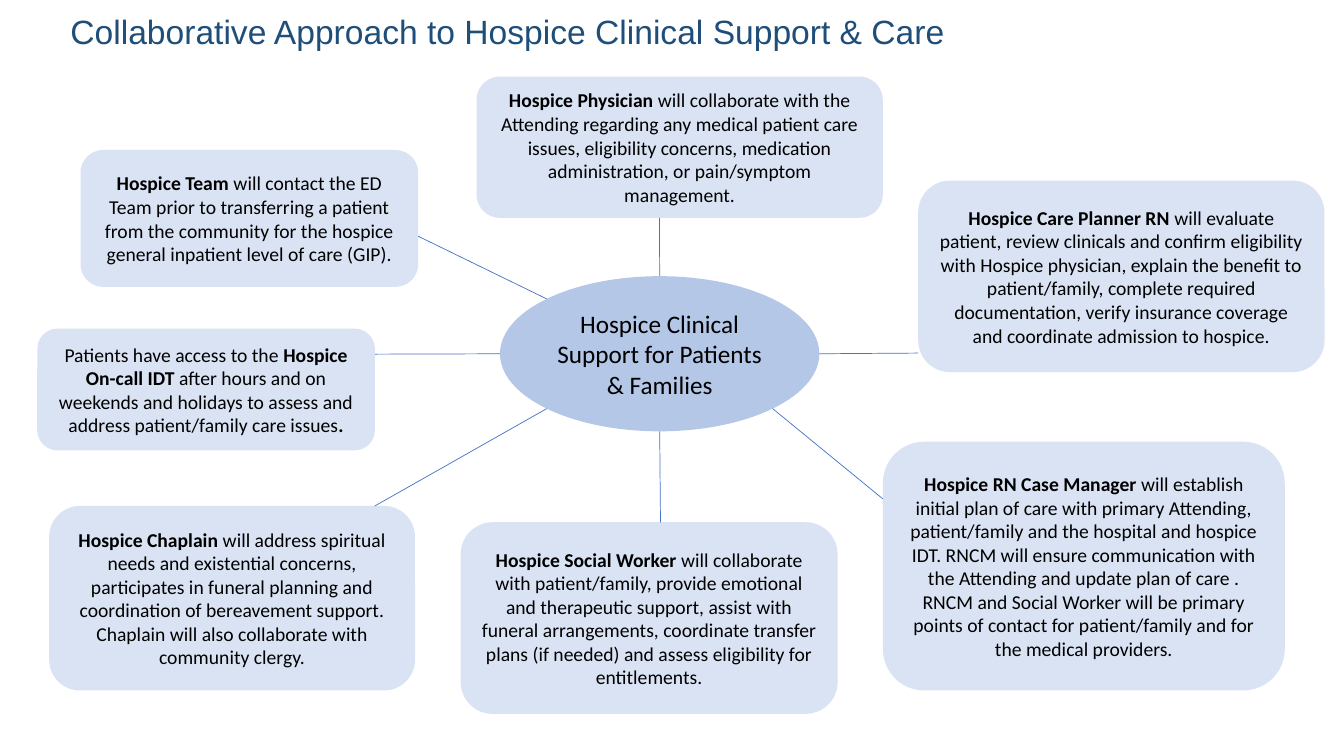
from math import cos, radians, sin

from lxml import etree
from pptx import Presentation
from pptx import util as u
from pptx.dml.color import RGBColor
from pptx.enum import shapes, text
from pptx.oxml.ns import qn

HUB_BOX = (12.6, 6.96, 8.05, 3.91)

# Each role: text (bold between **), box in cm, angle on the hub in degrees,
# and the line's end as fractions of the box width and height
ROLES = [
    ("**Hospice RN Case Manager **will establish initial plan of care with primary "
     "Attending, patient/family and the hospital and hospice IDT. RNCM will ensure "
     "communication with the Attending and update plan of care . RNCM and Social Worker "
     "will be primary points of contact for patient/family and for the medical providers.",
     (22.25, 11.13, 10.13, 6.27), 45, (0, 0.23)),
    ("**Hospice Social Worker **will collaborate with patient/family, provide emotional "
     "and therapeutic support, assist with funeral arrangements, coordinate transfer "
     "plans (if needed) and assess eligibility for entitlements.",
     (11.61, 13.16, 9.5, 4.83), 90, (0.53, 0)),
    ("**Hospice Physician **will collaborate with the Attending regarding any medical "
     "patient care issues, eligibility concerns, medication administration, or "
     "pain/symptom management.",
     (12.01, 1.93, 10.24, 3.56), 270, (0.45, 1)),
    ("**Hospice Team **will contact the ED Team prior to transferring a patient from the "
     "community for the hospice general inpatient level of care (GIP).",
     (2.03, 3.78, 8.51, 3.45), 225, (1, 0.63)),
    ("Patients have access to the **Hospice On-call IDT **after hours and on weekends and "
     "holidays to assess and address patient/family care issues**.**",
     (0.94, 8.28, 8.51, 3.07), 180, (1, 0.21)),
    ("**Hospice Care Planner RN **will evaluate patient, review clinicals and confirm "
     "eligibility with Hospice physician, explain the benefit to patient/family, complete "
     "required documentation, verify insurance coverage and coordinate admission to hospice.",
     (23.14, 4.55, 10.24, 4.83), 0, (0, 0.9)),
    ("**Hospice Chaplain **will address spiritual needs and existential concerns, "
     "participates in funeral planning and coordination of bereavement support. Chaplain "
     "will also collaborate with community clergy.",
     (1.24, 12.75, 9.22, 4.65), 135, (0.89, 0)),
]


def color(value):
    return RGBColor.from_string(value)


def write(frame, content, size=14, font="Calibri", fill="000000",
          align=text.PP_ALIGN.CENTER, anchor=text.MSO_ANCHOR.MIDDLE, spacing=None):
    """Write one paragraph; parts between ** are bold."""
    frame.word_wrap = True
    frame.auto_size = text.MSO_AUTO_SIZE.NONE
    frame.vertical_anchor = anchor
    paragraph = frame.paragraphs[0]
    paragraph.alignment = align
    paragraph.line_spacing = spacing
    for index, part in enumerate(content.split("**")):
        if part:
            run = paragraph.add_run()
            run.text = part
            run.font.size = u.Pt(size)
            run.font.name = font
            run.font.bold = index % 2 == 1
            run.font.color.rgb = color(fill)


def add_title(slide, box, content):
    title = slide.shapes.title
    title.left, title.top, title.width, title.height = map(u.Cm, box)
    write(title.text_frame, content, size=24, font="Arial", fill="1F4E79",
          align=text.PP_ALIGN.LEFT, anchor=text.MSO_ANCHOR.TOP, spacing=0.9)


def add_bubble(slide, kind, box, fill, content, size):
    shape = slide.shapes.add_shape(kind, *map(u.Cm, box))
    shape.shadow.inherit = False
    shape.fill.solid()
    shape.fill.fore_color.rgb = color(fill)
    shape.line.fill.background()
    write(shape.text_frame, content, size=size)


def add_spoke(slide, hub_box, angle, box, end):
    """Join the hub's rim at an angle to a point on a role's box."""
    hub_left, hub_top, hub_width, hub_height = hub_box
    left, top, width, height = box
    start_x = hub_left + hub_width / 2 * (1 + cos(radians(angle)))
    start_y = hub_top + hub_height / 2 * (1 + sin(radians(angle)))
    points = (start_x, start_y, left + width * end[0], top + height * end[1])
    connector = slide.shapes.add_connector(shapes.MSO_CONNECTOR.STRAIGHT, *map(u.Cm, points))
    connector.line.color.rgb = color("4472C4")
    connector.line.width = u.Pt(0.5)
    etree.SubElement(connector._element.spPr, qn("a:effectLst"))


def add_role_map(slide, hub_box, roles):
    # Hub
    add_bubble(slide, shapes.MSO_SHAPE.OVAL, hub_box, "B4C7E7",
               "Hospice Clinical Support for Patients & Families", 18)
    # Role cards
    for content, box, _, _ in roles:
        add_bubble(slide, shapes.MSO_SHAPE.ROUNDED_RECTANGLE, box, "DAE3F3", content, 14)
    # Spokes
    for _, box, angle, end in roles:
        add_spoke(slide, hub_box, angle, box, end)


def main():
    presentation = Presentation()
    presentation.slide_width = u.Cm(33.87)
    presentation.slide_height = u.Cm(19.05)
    slide = presentation.slides.add_slide(presentation.slide_layouts[5])
    add_title(slide, (1.52, 0.25, 29.21, 4.83),
              "Collaborative Approach to Hospice Clinical Support & Care")
    add_role_map(slide, HUB_BOX, ROLES)
    presentation.save("out.pptx")


if __name__ == "__main__":
    main()
